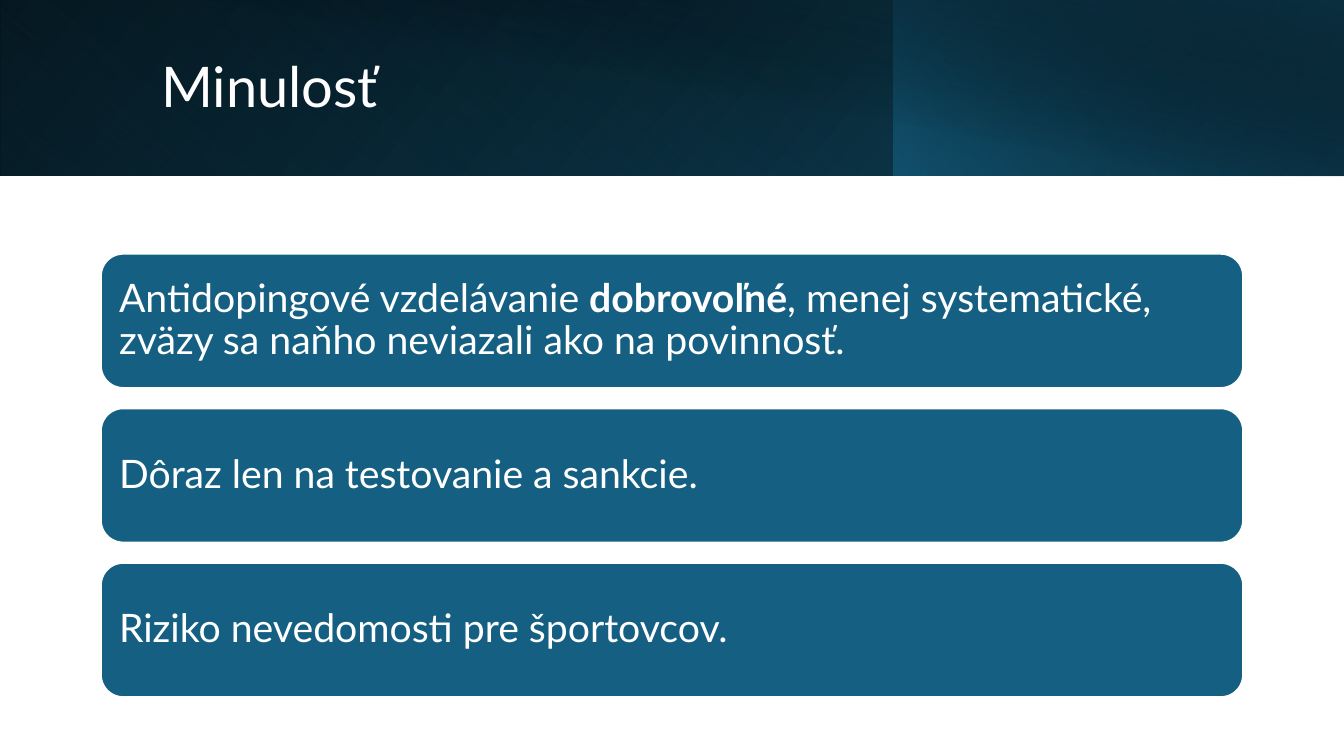
"""Build the "Minulosť" slide: a gradient header band above three statement cards."""
from dataclasses import dataclass

from lxml.etree import SubElement
from pptx import Presentation
from pptx.dml.color import RGBColor
from pptx.enum.shapes import MSO_SHAPE as Shape
from pptx.enum.text import MSO_ANCHOR as Anchor, PP_ALIGN as Align
from pptx.oxml.ns import qn
from pptx.slide import Slide
from pptx.text.text import TextFrame
from pptx.util import Emu, Pt

EMU_PER_PX = 7620


@dataclass(frozen=True)
class Theme:
    font: str = "Lato"
    white: str = "FFFFFF"
    black: str = "000000"
    teal: str = "156082"
    deep_teal: str = "104862"
    navy: str = "0B3041"
    title_size: int = 40
    card_size: int = 28
    card_line: float = 1.5
    line_spacing: float = 0.9


@dataclass(frozen=True)
class Box:
    left: int
    top: int
    width: int
    height: int


@dataclass(frozen=True)
class Stop:
    position: int
    color: str
    opacity: int = 100


@dataclass(frozen=True)
class Band:
    box: Box
    angle: int
    stops: tuple[Stop, Stop]
    flipped: bool = True
    rotation: int = 0


@dataclass(frozen=True)
class Run:
    text: str
    bold: bool = False


THEME = Theme()
SLIDE_BOX = Box(0, 0, 1600, 900)
TITLE_BOX = Box(180, 38, 1298, 136)
FIRST_CARD = Box(120, 302, 1360, 160)
CARD_PITCH = 184
CARD_INSET = 14

BANDS = (
    Band(Box(0, 0, 1600, 209), 140, (Stop(0, THEME.black), Stop(100, THEME.deep_teal))),
    Band(Box(0, 0, 1065, 209), 230, (Stop(20, THEME.teal, 0), Stop(100, THEME.navy, 55)), rotation=180),
    Band(Box(1064, 0, 536, 209), 220, (Stop(0, THEME.teal, 66), Stop(100, THEME.black, 30))),
    Band(Box(60, 0, 1540, 210), 280, (Stop(50, THEME.black, 0), Stop(99, THEME.navy, 52)), flipped=False),
)
TITLE = (Run("Minulosť"),)
CARDS = (
    (
        Run("Antidopingové vzdelávanie "),
        Run("dobrovoľné", bold=True),
        Run(", menej systematické, zväzy sa naňho neviazali ako na povinnosť."),
    ),
    (Run("Dôraz len na testovanie a sankcie."),),
    (Run("Riziko nevedomosti pre športovcov."),),
)


def px(length: int) -> Emu:
    """Convert pixels to EMU."""
    return Emu(length * EMU_PER_PX)


def place(box: Box) -> tuple[Emu, Emu, Emu, Emu]:
    """Return a box as left, top, width and height in EMU."""
    return px(box.left), px(box.top), px(box.width), px(box.height)


def draw_band(slide: Slide, band: Band) -> None:
    """Draw one header rectangle with a linear gradient."""
    shape = slide.shapes.add_shape(Shape.RECTANGLE, *place(band.box))
    shape.shadow.inherit = False
    shape.rotation = band.rotation
    shape.line.fill.background()
    properties = shape._element.spPr
    if band.flipped:
        properties.find(qn("a:xfrm")).set("flipH", "1")
    gradient = SubElement(properties, qn("a:gradFill"), rotWithShape="1")
    properties.find(qn("a:prstGeom")).addnext(gradient)
    stop_list = SubElement(gradient, qn("a:gsLst"))
    for stop in band.stops:
        entry = SubElement(stop_list, qn("a:gs"), pos=str(stop.position * 1000))
        color = SubElement(entry, qn("a:srgbClr"), val=stop.color)
        SubElement(color, qn("a:alpha"), val=str(stop.opacity * 1000))
    SubElement(gradient, qn("a:lin"), ang=str(band.angle * 60000), scaled="0")


def write_runs(text_frame: TextFrame, runs: tuple[Run, ...], size: int) -> None:
    """Write one left-aligned, vertically centred paragraph."""
    text_frame.word_wrap = True
    text_frame.vertical_anchor = Anchor.MIDDLE
    paragraph = text_frame.paragraphs[0]
    paragraph.alignment = Align.LEFT
    paragraph.line_spacing = THEME.line_spacing
    for part in runs:
        run = paragraph.add_run()
        run.text = part.text
        run.font.name = THEME.font
        run.font.size = Pt(size)
        run.font.bold = part.bold
        run.font.color.rgb = RGBColor.from_string(THEME.white)


def draw_card(slide: Slide, box: Box, runs: tuple[Run, ...]) -> None:
    """Draw one rounded card with its statement."""
    shape = slide.shapes.add_shape(Shape.ROUNDED_RECTANGLE, *place(box))
    shape.shadow.inherit = False
    shape.fill.solid()
    shape.fill.fore_color.rgb = RGBColor.from_string(THEME.teal)
    shape.line.color.rgb = RGBColor.from_string(THEME.white)
    shape.line.width = Pt(THEME.card_line)
    text_frame = shape.text_frame
    text_frame.margin_left = text_frame.margin_right = px(CARD_INSET)
    text_frame.margin_top = text_frame.margin_bottom = px(CARD_INSET)
    write_runs(text_frame, runs, THEME.card_size)


def main() -> None:
    """Build and save the presentation."""
    presentation = Presentation()
    presentation.slide_width = px(SLIDE_BOX.width)
    presentation.slide_height = px(SLIDE_BOX.height)
    slide = presentation.slides.add_slide(presentation.slide_layouts[6])
    for band in BANDS:
        draw_band(slide, band)
    title = slide.shapes.add_textbox(*place(TITLE_BOX))
    write_runs(title.text_frame, TITLE, THEME.title_size)
    for index, runs in enumerate(CARDS):
        top = FIRST_CARD.top + index * CARD_PITCH
        draw_card(slide, Box(FIRST_CARD.left, top, FIRST_CARD.width, FIRST_CARD.height), runs)
    presentation.save("out.pptx")


if __name__ == "__main__":
    main()
